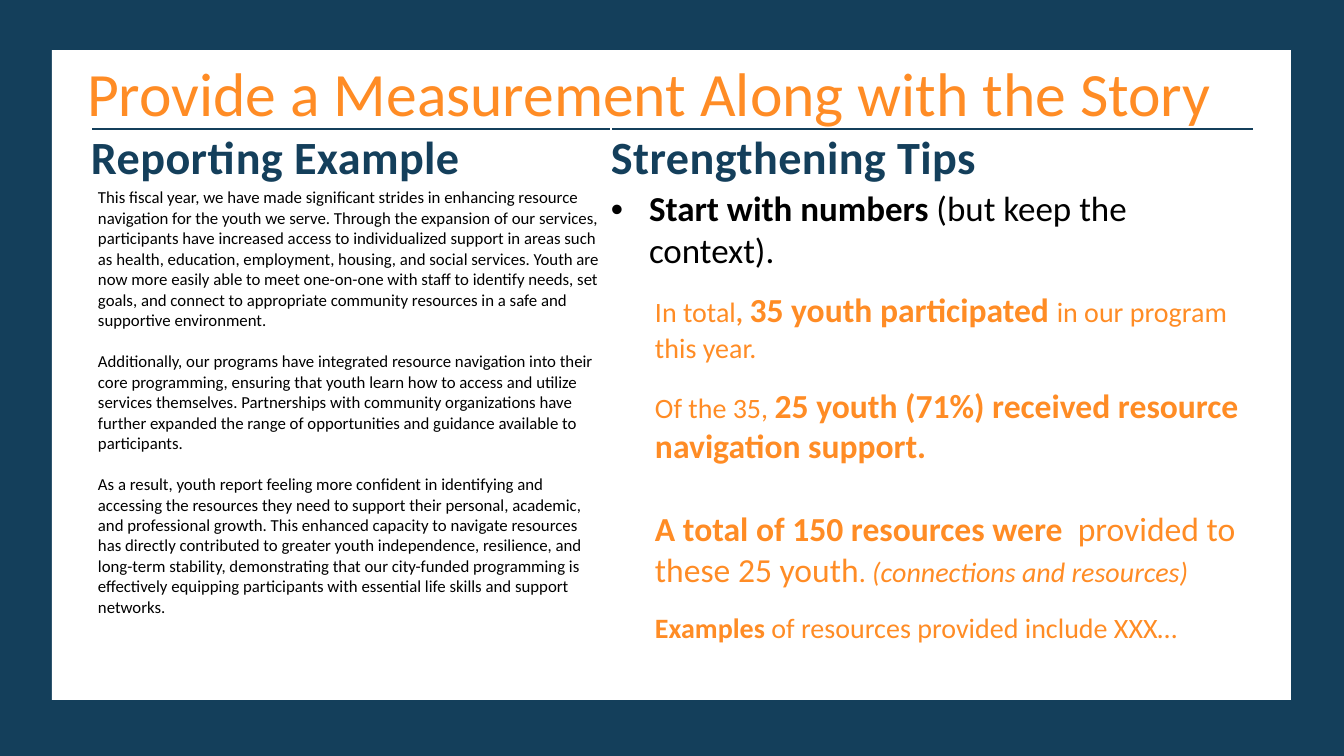
from lxml.etree import SubElement as Sub
from pptx import Presentation
from pptx.dml.color import RGBColor as RGB
from pptx.enum.shapes import MSO_SHAPE as Shape
from pptx.enum.text import MSO_ANCHOR as Anchor, MSO_AUTO_SIZE as Auto, PP_ALIGN as Align
from pptx.oxml import parse_xml
from pptx.oxml.ns import nsdecls, qn
from pptx.util import Emu, Pt

NAVY = RGB(0x14, 0x3F, 0x5B)
ORANGE = RGB(0xFF, 0x8C, 0x25)
WHITE = RGB(0xFF, 0xFF, 0xFF)
BLACK = RGB(0, 0, 0)
FACE = "Calibri"
SCALE = 914400 / 100.8

TITLE = "Provide a Measurement Along with the Story"
HEADS = ["Reporting Example", "Strengthening Tips"]
STORY = [
    "This fiscal year, we have made significant strides in enhancing resource navigation for the youth we serve. "
    "Through the expansion of our services, participants have increased access to individualized support in areas "
    "such as health, education, employment, housing, and social services. Youth are now more easily able to meet "
    "one-on-one with staff to identify needs, set goals, and connect to appropriate community resources in a safe "
    "and supportive environment.",
    "Additionally, our programs have integrated resource navigation into their core programming, ensuring that "
    "youth learn how to access and utilize services themselves. Partnerships with community organizations have "
    "further expanded the range of opportunities and guidance available to participants.",
    "As a result, youth report feeling more confident in identifying and accessing the resources they need to "
    "support their personal, academic, and professional growth. This enhanced capacity to navigate resources has "
    "directly contributed to greater youth independence, resilience, and long-term stability, demonstrating that "
    "our city-funded programming is effectively equipping participants with essential life skills and support "
    "networks.",
]
LEAD = [("Start with numbers ", 25, True, False), ("(but keep the context).", 25, False, False)]
TIPS = [
    (12.2, [("In total", 20, False, False), (", ", 20, True, False),
            ("35 youth participated ", 24, True, False), ("in our program this year.", 20, False, False)]),
    (14.6, [("Of the 35, ", 20, False, False),
            ("25 youth (71%) received resource navigation support.", 24, True, False)]),
    (29.3, [("A total of 150 resources were  ", 24, True, False), ("provided to these 25 youth", 24, False, False),
            (". ", 20, False, False), ("(connections and resources)", 20, False, True)]),
    (14.6, [("Examples", 20, True, False), (" of resources provided include XXX…", 20, False, False)]),
]


def px(n):
    """Turn pixels into EMU."""
    return Emu(round(n * SCALE))


def style(para, color, size=None, bold=None):
    """Set the font of a paragraph."""
    font = para.font
    font.name, font.color.rgb = FACE, color
    if size:
        font.size = Pt(size)
    font.bold = bold


def next_para(frame, index, gap):
    """Return the paragraph at index, spaced from the one above."""
    if index == 0:
        return frame.paragraphs[0]
    para = frame.add_paragraph()
    para.space_before = Pt(gap)
    return para


def add_panel(slide, box, color):
    """Draw a plain filled rectangle."""
    panel = slide.shapes.add_shape(Shape.RECTANGLE, *map(px, box))
    panel.shadow.inherit = False
    panel.fill.solid()
    panel.fill.fore_color.rgb = color
    panel.line.fill.background()


def set_title(slide, box):
    """Place the title in front of the panels."""
    title = slide.shapes.title
    title.left, title.top, title.width, title.height = map(px, box)
    frame = title.text_frame
    frame.text, frame.word_wrap = TITLE, True
    frame.auto_size, frame.vertical_anchor = Auto.NONE, Anchor.TOP
    para = frame.paragraphs[0]
    para.alignment = Align.LEFT
    style(para, ORANGE, 44)
    slide.shapes._spTree.append(title._element)


def set_cell(cell, left, right):
    """Clear the fill of a cell and set its margins."""
    cell.fill.background()
    cell.margin_left, cell.margin_right = px(left), px(right)
    cell.margin_top = cell.margin_bottom = 0


def fill_head(cell, text):
    """Write a column heading under a rule."""
    set_cell(cell, 0, 2)
    cell.vertical_anchor = Anchor.MIDDLE
    cell.text = text
    para = cell.text_frame.paragraphs[0]
    style(para, NAVY, 33, True)
    para.runs[0].font._element.set("spc", "30")
    cell._tc.get_or_add_tcPr().insert(0, parse_xml(
        f'<a:lnT {nsdecls("a")} w="{Pt(1.5)}"><a:solidFill><a:srgbClr val="{NAVY}"/></a:solidFill></a:lnT>'))


def fill_story(cell):
    """Write the example report."""
    set_cell(cell, 7, 7)
    for i, text in enumerate(STORY):
        para = next_para(cell.text_frame, i, 14.6)
        para.add_run().text = text
        style(para, BLACK, 12, False)


def fill_tips(cell):
    """Write the bulleted tip and its indented samples."""
    set_cell(cell, 0, 14)
    for i, (gap, parts) in enumerate([(0, LEAD)] + TIPS):
        para = next_para(cell.text_frame, i, gap)
        props = para._p.get_or_add_pPr()
        props.set("marL", str(px(44 if i else 38)))
        props.set("indent", str(px(0 if i else -38)))
        if i == 0:
            Sub(props, qn("a:buFont"), typeface="Arial")
            Sub(props, qn("a:buChar"), char="•")
        style(para, ORANGE if i else BLACK)
        for text, size, bold, slant in parts:
            run = para.add_run()
            run.text = text
            run.font.size, run.font.bold, run.font.italic = Pt(size), bold, slant


def add_guide(slide, box, cols, rows):
    """Build the two-column table of example and tips."""
    table = slide.shapes.add_table(2, 2, *map(px, box)).table
    table.first_row = table.horz_banding = False
    for col, width in zip(table.columns, cols):
        col.width = px(width)
    for row, height in zip(table.rows, rows):
        row.height = px(height)
    for i, text in enumerate(HEADS):
        fill_head(table.cell(0, i), text)
    fill_story(table.cell(1, 0))
    fill_tips(table.cell(1, 1))


def main():
    """Build and save the slide."""
    deck = Presentation()
    deck.slide_width, deck.slide_height = px(1344), px(756)
    slide = deck.slides.add_slide(deck.slide_layouts[5])
    add_panel(slide, (0, 0, 1344, 756), NAVY)
    add_panel(slide, (52, 50, 1239, 650), WHITE)
    add_guide(slide, (91, 129, 1163, 493), (520, 643), (59, 434))
    set_title(slide, (77, 50, 1189, 85))
    deck.save("out.pptx")


if __name__ == "__main__":
    main()
